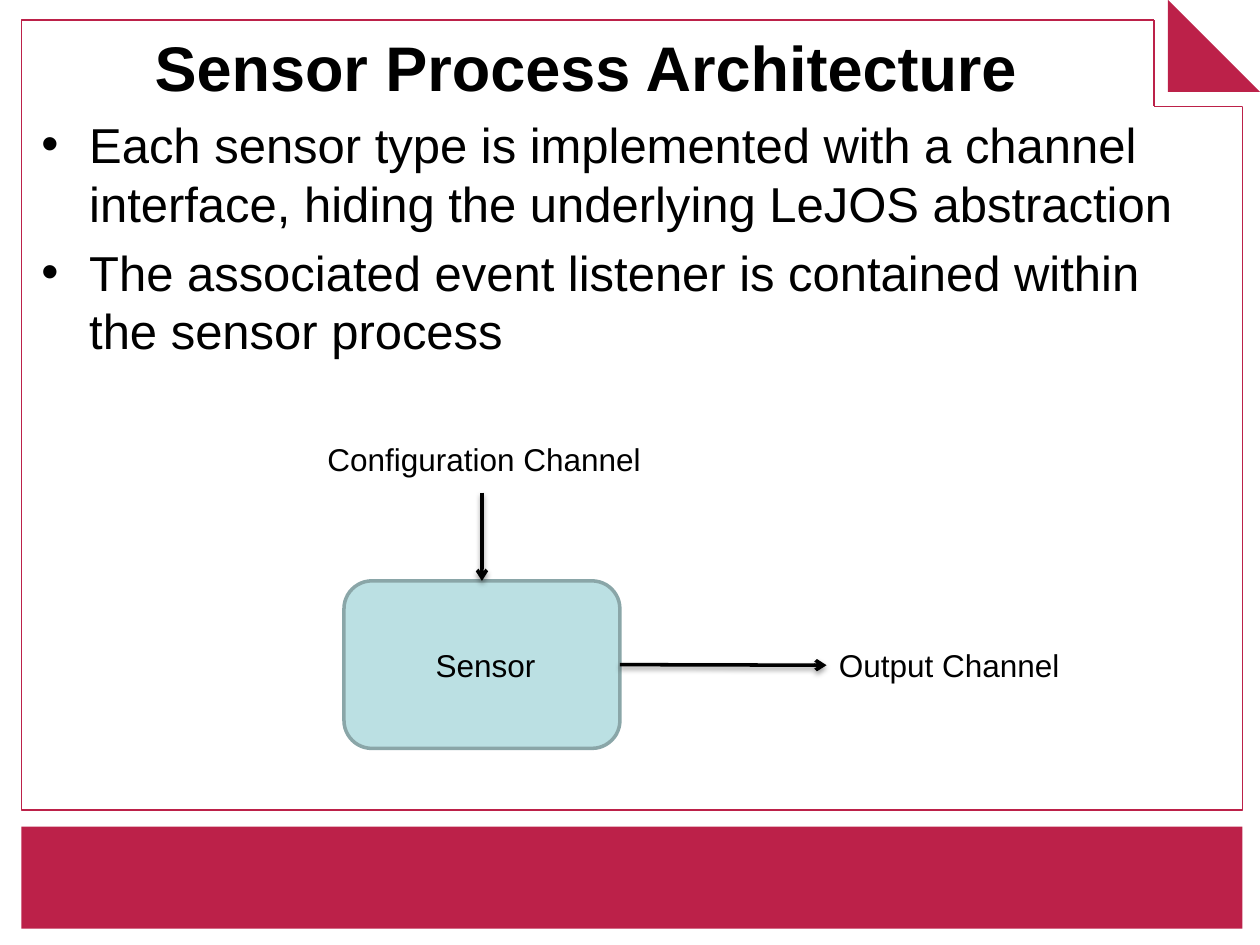
"""Builds the Sensor Process Architecture slide."""
from collections import namedtuple

from lxml.etree import SubElement
from pptx import Presentation
from pptx.dml.color import RGBColor
from pptx.enum.shapes import MSO_CONNECTOR as Link, MSO_SHAPE as Shape
from pptx.enum.text import MSO_ANCHOR as Anchor, MSO_AUTO_SIZE as Fit, PP_ALIGN as Align
from pptx.oxml.ns import qn
from pptx.util import Inches, Pt

Theme = namedtuple("Theme", "crimson paper ink sensor sensor_edge font title body label rule stroke")
THEME = Theme("BC2149", "FFFFFF", "000000", "BBE0E3", "8AA6A8", "Arial", 36, 28, 18, 0.75, 2)
WIDTH, HEIGHT = 10, 7.5

TITLE = "Sensor Process Architecture"
POINTS = [
    "Each sensor type is implemented with a channel interface, hiding the underlying LeJOS abstraction",
    "The associated event listener is contained within the sensor process",
]

# Percent shares of the slide: left, top, width, height
FRAME = (1.7, 2.13, 96.9, 83.6)
NOTCH = (91.6, 0, 8.4, 11.27)
FOLD = (92.7, 0, 7.3, 9.73)
FOOTER = (1.7, 87.47, 96.9, 10.8)
TITLE_AREA = (2.3, 2.8, 88.4, 8.4)
BODY_AREA = (2.3, 11.47, 95.3, 28.13)
SENSOR = (27.3, 61.47, 21.9, 17.73)
LABELS = [
    ("Output Channel", (65.6, 67.73, 19.7, 5.33)),
    ("Configuration Channel", (25, 45.87, 27.1, 5.33)),
    ("Sensor", (33.6, 67.73, 10, 5.33)),
]


def place(*shares):
    sides = (WIDTH, HEIGHT) * 2
    return [Inches(share * side / 100) for share, side in zip(shares, sides)]


def apply(target, formats):
    for name, value in formats.items():
        setattr(target, name, value)


def panel(slide, kind, area, fill, edge=None, weight=0):
    part = slide.shapes.add_shape(kind, *place(*area))
    part.shadow.inherit = False
    part.fill.solid()
    part.fill.fore_color.rgb = RGBColor.from_string(fill)
    if edge:
        part.line.color.rgb = RGBColor.from_string(edge)
        part.line.width = Pt(weight)
    else:
        part.line.fill.background()


def rule(slide, ends, color, weight, arrow=False):
    link = slide.shapes.add_connector(Link.STRAIGHT, *place(*ends))
    link.line.color.rgb = RGBColor.from_string(color)
    link.line.width = Pt(weight)
    properties = link.line._get_or_add_ln()
    effects = SubElement(link._element.spPr, qn("a:effectLst"))
    if arrow:
        SubElement(properties, qn("a:tailEnd"), type="arrow")
        shadow = SubElement(effects, qn("a:outerShdw"), blurRad=str(Pt(3.1)),
                            dist=str(Pt(1.6)), dir="5400000", rotWithShape="0")
        tint = SubElement(shadow, qn("a:srgbClr"), val=color)
        SubElement(tint, qn("a:alpha"), val="38000")


def write(slide, area, lines, size, frame_formats, bold=False, align=Align.LEFT, bullets=False):
    frame = slide.shapes.add_textbox(*place(*area)).text_frame
    apply(frame, frame_formats)
    for index, line in enumerate(lines):
        paragraph = frame.paragraphs[0] if index == 0 else frame.add_paragraph()
        paragraph.alignment = align
        if index:
            paragraph.space_before = Pt(size * 0.2)
        if bullets:
            settings = paragraph._p.get_or_add_pPr()
            indent = Inches(0.38)
            settings.set("marL", str(indent))
            settings.set("indent", str(-indent))
            SubElement(settings, qn("a:buFont"), typeface=THEME.font)
            SubElement(settings, qn("a:buChar"), char="•")
        run = paragraph.add_run()
        run.text = line
        apply(run.font, {"name": THEME.font, "size": Pt(size), "bold": bold})
        run.font.color.rgb = RGBColor.from_string(THEME.ink)


def main():
    deck = Presentation()
    apply(deck, {"slide_width": Inches(WIDTH), "slide_height": Inches(HEIGHT)})
    slide = deck.slides.add_slide(deck.slide_layouts[6])

    panel(slide, Shape.RECTANGLE, FRAME, THEME.paper, THEME.crimson, THEME.rule)
    panel(slide, Shape.RECTANGLE, NOTCH, THEME.paper)
    panel(slide, Shape.RIGHT_TRIANGLE, FOLD, THEME.crimson)
    panel(slide, Shape.RECTANGLE, FOOTER, THEME.crimson)
    corner_x, corner_y = NOTCH[0], NOTCH[3]
    rule(slide, (corner_x, FRAME[1], corner_x, corner_y), THEME.crimson, THEME.rule)
    rule(slide, (corner_x, corner_y, FRAME[0] + FRAME[2], corner_y), THEME.crimson, THEME.rule)

    write(slide, TITLE_AREA, [TITLE], THEME.title,
          {"word_wrap": True, "vertical_anchor": Anchor.MIDDLE}, bold=True, align=Align.CENTER)
    write(slide, BODY_AREA, POINTS, THEME.body, {"word_wrap": True}, bullets=True)

    panel(slide, Shape.ROUNDED_RECTANGLE, SENSOR, THEME.sensor, THEME.sensor_edge, THEME.stroke)
    left, top, width, height = SENSOR
    middle_x, middle_y = left + width / 2, top + height / 2
    output_area, configuration_area = LABELS[0][1], LABELS[1][1]
    output_y = output_area[1] + output_area[3] / 2
    configuration_y = configuration_area[1] + configuration_area[3] + 0.93
    for ends in [(left + width, middle_y, output_area[0], output_y),
                 (middle_x, configuration_y, middle_x, top)]:
        rule(slide, ends, THEME.ink, THEME.stroke, arrow=True)
    for label, area in LABELS:
        write(slide, area, [label], THEME.label,
              {"word_wrap": False, "auto_size": Fit.SHAPE_TO_FIT_TEXT})

    deck.save("out.pptx")


if __name__ == "__main__":
    main()
